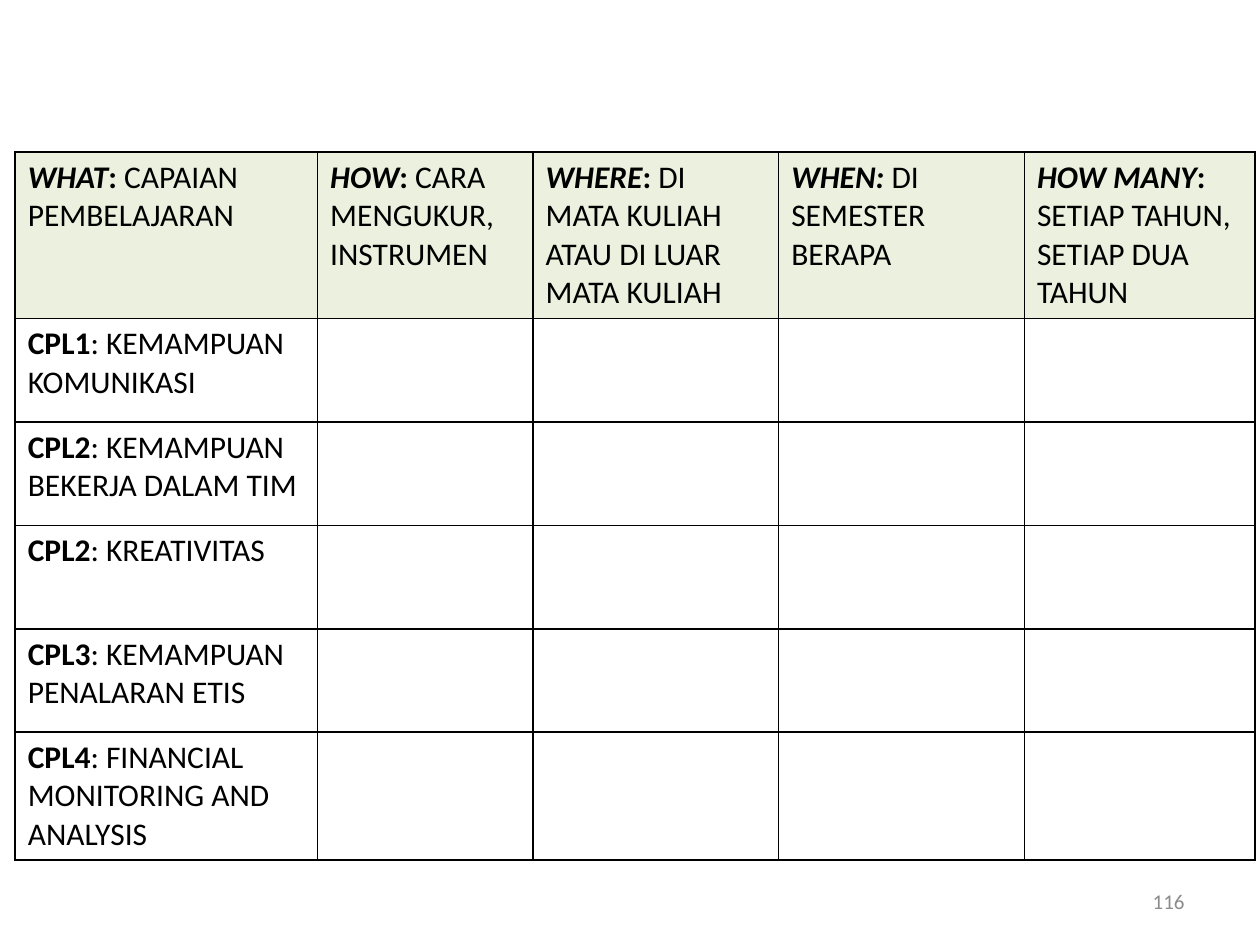
from lxml import etree
from pptx import Presentation
from pptx.dml.color import RGBColor
from pptx.enum.text import MSO_ANCHOR, PP_ALIGN
from pptx.oxml.ns import qn
from pptx.util import Pt

MIDDLE = MSO_ANCHOR.MIDDLE
RIGHT = PP_ALIGN.RIGHT

HEADERS = [
    [("WHAT", "bi"), (": ", "b"), ("CAPAIAN PEMBELAJARAN", "")],
    [("HOW", "bi"), (": ", "b"), ("CARA MENGUKUR, INSTRUMEN", "")],
    [("WHERE", "bi"), (": ", "b"), ("DI MATA KULIAH ATAU DI LUAR MATA KULIAH", "")],
    [("WHEN: ", "bi"), ("DI SEMESTER BERAPA", "")],
    [("HOW MANY", "bi"), (": ", "b"), ("SETIAP TAHUN, SETIAP DUA TAHUN", "")],
]
OUTCOMES = [
    ("CPL1", "KEMAMPUAN KOMUNIKASI"),
    ("CPL2", "KEMAMPUAN BEKERJA DALAM TIM"),
    ("CPL2", "KREATIVITAS"),
    ("CPL3", "KEMAMPUAN PENALARAN ETIS"),
    ("CPL4", "FINANCIAL MONITORING AND ANALYSIS"),
]
COLUMN_WIDTHS = [172.8, 123.1, 140.4, 140.4, 131.8]
ROW_HEIGHT = 59.1


def color(value):
    return RGBColor.from_string(value)


def add_text(paragraph, text, size=18, fill="000000", bold=False, italic=False):
    run = paragraph.add_run()
    run.text = text
    run.font.name = "Calibri"
    run.font.size = Pt(size)
    run.font.bold = bold
    run.font.italic = italic
    run.font.color.rgb = color(fill)


presentation = Presentation()
presentation.slide_width = Pt(720)
presentation.slide_height = Pt(540)
slide = presentation.slides.add_slide(presentation.slide_layouts[6])

# Assessment plan table
rows = [HEADERS] + [
    [[(code, "b"), (f": {outcome}", "")]] + [[]] * (len(HEADERS) - 1)
    for code, outcome in OUTCOMES
]
table = slide.shapes.add_table(
    len(rows), len(HEADERS), Pt(8.7), Pt(87), Pt(sum(COLUMN_WIDTHS)), Pt(ROW_HEIGHT * len(rows))
).table
for column, width in zip(table.columns, COLUMN_WIDTHS):
    column.width = Pt(width)
for row in table.rows:
    row.height = Pt(ROW_HEIGHT)

for row_index, row_cells in enumerate(rows):
    for column_index, parts in enumerate(row_cells):
        cell = table.cell(row_index, column_index)
        paragraph = cell.text_frame.paragraphs[0]
        paragraph.font.size = Pt(18)
        for text, style in parts:
            add_text(paragraph, text, bold="b" in style, italic="i" in style)

        # Borders come before the fill in the cell properties
        properties = cell._tc.get_or_add_tcPr()
        for side in ("a:lnL", "a:lnR", "a:lnT", "a:lnB"):
            line = etree.SubElement(properties, qn(side), w=str(Pt(1)))
            solid = etree.SubElement(line, qn("a:solidFill"))
            etree.SubElement(solid, qn("a:srgbClr"), val="000000")
        cell.fill.solid()
        cell.fill.fore_color.rgb = color("EBF1DE" if row_index == 0 else "FFFFFF")

# Page number
page_number = slide.shapes.add_textbox(Pt(516), Pt(500.5), Pt(168), Pt(28.75))
frame = page_number.text_frame
frame.word_wrap = True
frame.vertical_anchor = MIDDLE
paragraph = frame.paragraphs[0]
paragraph.alignment = RIGHT
add_text(paragraph, "116", size=12, fill="8C8C8C")

presentation.save("out.pptx")
